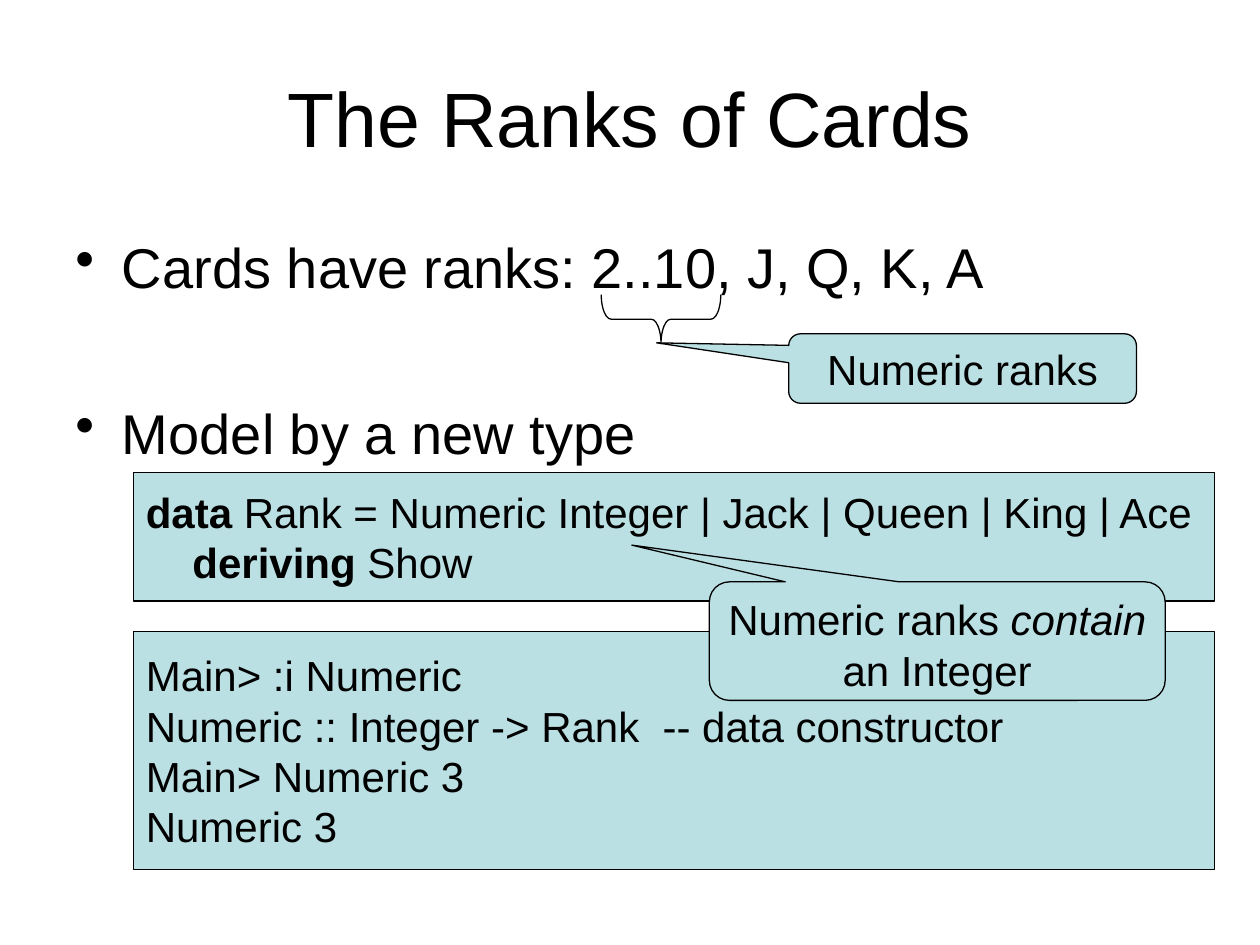
from dataclasses import dataclass

from lxml import etree
from pptx import Presentation
from pptx.dml.color import RGBColor
from pptx.enum.shapes import MSO_SHAPE
from pptx.enum.text import MSO_ANCHOR, PP_ALIGN
from pptx.oxml.ns import qn
from pptx.util import Cm, Pt

RECTANGLE = MSO_SHAPE.RECTANGLE
CALLOUT = MSO_SHAPE.ROUNDED_RECTANGULAR_CALLOUT
BRACE = MSO_SHAPE.RIGHT_BRACE
LEFT, CENTER = PP_ALIGN.LEFT, PP_ALIGN.CENTER
TOP, MIDDLE = MSO_ANCHOR.TOP, MSO_ANCHOR.MIDDLE


@dataclass(frozen=True)
class Theme:
    font: str = "Arial"
    ink: RGBColor = RGBColor(0x00, 0x00, 0x00)
    panel: RGBColor = RGBColor(0xBB, 0xE0, 0xE3)
    title: int = 44
    body: int = 32
    code: int = 24
    line: float = 0.75
    indent: float = 0.94


def add_text(para, text, *, theme, size, bold=False, italic=False):
    span = para.add_run()
    span.text = text
    font = span.font
    font.name, font.size = theme.font, Pt(size)
    font.bold, font.italic = bold, italic
    font.color.rgb = theme.ink


class SlideBuilder:
    """Draws styled elements on the current slide."""

    def __init__(self, page, theme):
        self.page = page
        self.theme = theme

    def fill_text(self, box, paragraphs, size, align=LEFT, anchor=TOP):
        frame = box.text_frame
        frame.word_wrap = True
        frame.vertical_anchor = anchor
        for index, spans in enumerate(paragraphs):
            para = frame.paragraphs[0] if index == 0 else frame.add_paragraph()
            para.alignment = align
            for text, style in spans:
                add_text(para, text, theme=self.theme, size=size, **style)
        return frame.paragraphs

    def title(self, area, text):
        box = self.page.shapes.add_textbox(*map(Cm, area))
        self.fill_text(box, [[(text, {})]], self.theme.title, CENTER, MIDDLE)

    def bullets(self, area, items, gap):
        box = self.page.shapes.add_textbox(*map(Cm, area))
        paras = self.fill_text(box, [[(item, {})] for item in items], self.theme.body)
        for index, para in enumerate(paras):
            para.space_before = Pt(gap if index else 0)
            self.indent(para, hanging=True)
            properties = para._p.get_or_add_pPr()
            etree.SubElement(properties, qn("a:buChar"), char="•")

    def indent(self, para, hanging=False):
        properties = para._p.get_or_add_pPr()
        width = Cm(self.theme.indent)
        properties.set("marL", str(width))
        properties.set("indent", str(-width if hanging else 0))

    def shape(self, kind, area, adjustments=(), filled=True):
        box = self.page.shapes.add_shape(kind, *map(Cm, area))
        box.shadow.inherit = False
        for index, value in enumerate(adjustments):
            box.adjustments[index] = value
        if filled:
            box.fill.solid()
            box.fill.fore_color.rgb = self.theme.panel
        else:
            box.fill.background()
        box.line.color.rgb = self.theme.ink
        box.line.width = Pt(self.theme.line)
        return box

    def brace(self, area):
        self.shape(BRACE, area, (0.2, 0.5), filled=False).rotation = 90

    def code(self, area, lines):
        box = self.shape(RECTANGLE, area)
        return self.fill_text(box, lines, self.theme.code, anchor=MIDDLE)

    def callout(self, area, tip, spans):
        box = self.shape(CALLOUT, area, (*tip, 0.17))
        self.fill_text(box, [spans], self.theme.code, CENTER)


def main():
    deck = Presentation()
    deck.slide_width, deck.slide_height = Cm(25.4), Cm(19.05)
    page = deck.slides.add_slide(deck.slide_layouts[6])
    slide = SlideBuilder(page, Theme())
    bold, italic = {"bold": True}, {"italic": True}

    slide.title((1.27, 0.76, 22.86, 3.18), "The Ranks of Cards")
    slide.bullets(
        (1.27, 4.57, 22.86, 12.57),
        ["Cards have ranks: 2..10, J, Q, K, A", "Model by a new type"],
        gap=56,
    )
    slide.brace((12.83, 5.23, 0.99, 2.41))
    slide.callout((15.9, 6.73, 7.01, 1.4), (-0.88, -0.37), [("Numeric ranks", {})])

    declaration = slide.code(
        (2.69, 9.53, 21.79, 2.59),
        [
            [("data", bold), (" Rank = Numeric Integer | Jack | Queen | King | Ace", {})],
            [("deriving", bold), (" Show", {})],
        ],
    )
    slide.indent(declaration[1])

    session = [
        "Main> :i Numeric",
        "Numeric :: Integer -> Rank  -- data constructor",
        "Main> Numeric 3",
        "Numeric 3",
    ]
    slide.code((2.69, 12.73, 21.79, 4.8), [[(line, {})] for line in session])
    slide.callout(
        (14.3, 11.73, 9.19, 2.39),
        (-0.67, -0.81),
        [("Numeric ranks ", {}), ("contain", italic), (" an Integer", {})],
    )
    deck.save("out.pptx")


if __name__ == "__main__":
    main()
